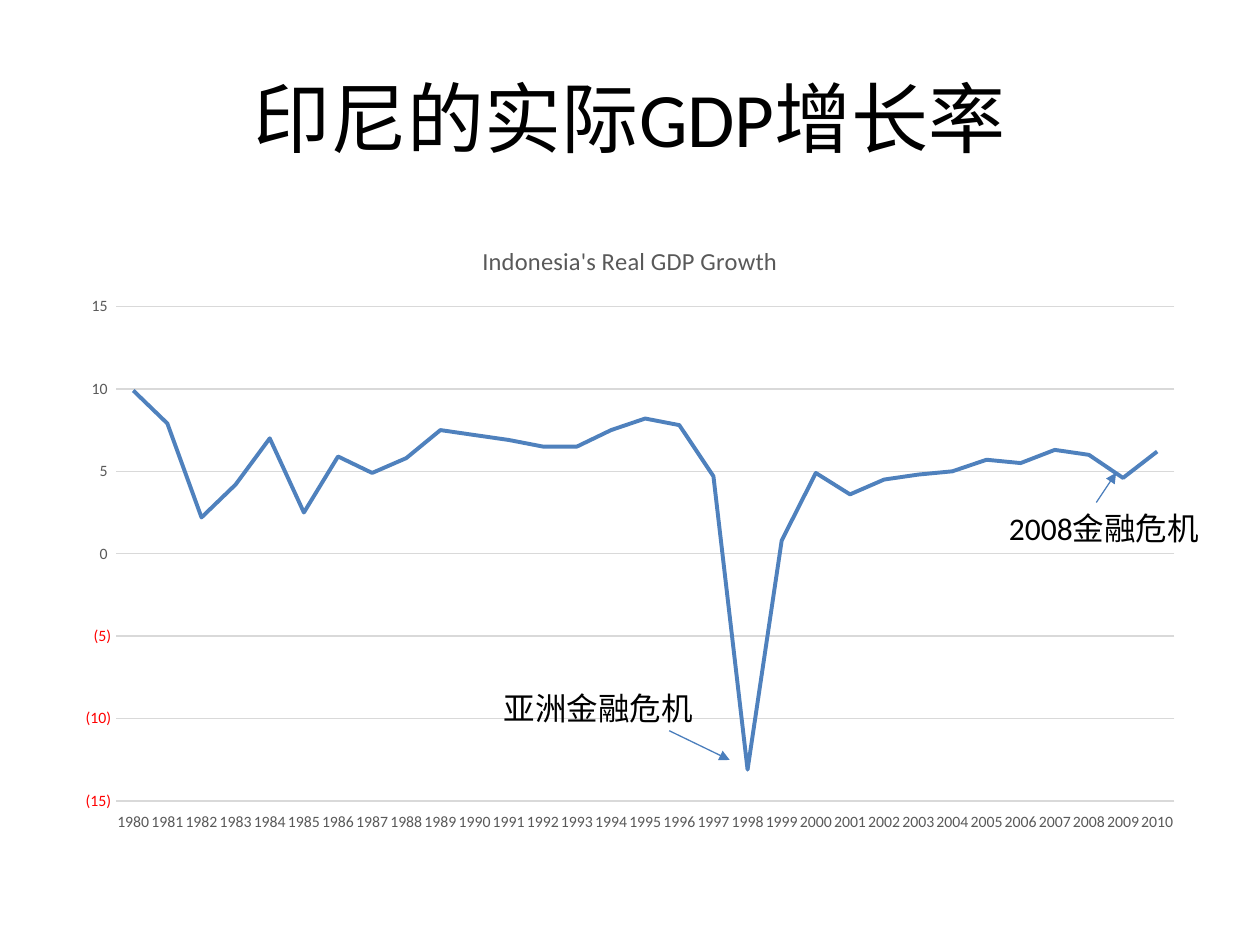
from dataclasses import dataclass

import pptx
import pptx.chart.data
import pptx.dml.color
import pptx.enum.chart
import pptx.enum.shapes
import pptx.enum.text
import pptx.oxml.ns
import pptx.oxml.xmlchemy
import pptx.util
from lxml import etree
from pptx.util import Cm


@dataclass(frozen=True)
class Theme:
    font: str = "Calibri"
    ink: str = "000000"
    muted: str = "595959"
    grid: str = "D9D9D9"
    growth: str = "4F81BD"
    arrow: str = "4B7EBC"
    title_size: float = 44
    label_size: float = 18
    chart_title_size: float = 14
    axis_size: float = 9
    chart_size: float = 10
    thin: float = 0.75
    thick: float = 2.25


theme = Theme()


def set_line(line, color, width):
    line.color.rgb = pptx.dml.color.RGBColor.from_string(color)
    line.width = pptx.util.Pt(width)


def write(text, *, frame=None, box=None, size=theme.label_size, color=theme.ink,
          align=None, anchor=pptx.enum.text.MSO_ANCHOR.TOP):
    """Write text in a given frame, or in a new text box at the given place."""
    if frame is None:
        frame = slide.shapes.add_textbox(*map(Cm, box)).text_frame
        frame.word_wrap = True
        frame.vertical_anchor = anchor
    paragraph = frame.paragraphs[0]
    paragraph.alignment = align
    run = paragraph.add_run()
    run.text = text
    run.font.name = theme.font
    run.font.size = pptx.util.Pt(size)
    run.font.bold = False
    run.font.color.rgb = pptx.dml.color.RGBColor.from_string(color)


presentation = pptx.Presentation()
presentation.slide_width, presentation.slide_height = Cm(25.4), Cm(19.05)
slide = presentation.slides.add_slide(presentation.slide_layouts[6])

# Heading
write("印尼的实际GDP增长率", box=(1.27, 0.76, 22.86, 3.18), size=theme.title_size,
      align=pptx.enum.text.PP_ALIGN.CENTER, anchor=pptx.enum.text.MSO_ANCHOR.MIDDLE)

# Growth chart, 1980 to 2010
growth_title = "Indonesia's Real GDP Growth"
growth_rates = [
    9.9, 7.9, 2.2, 4.2, 7, 2.5, 5.9, 4.9, 5.8, 7.5,
    7.2, 6.9, 6.5, 6.5, 7.5, 8.2, 7.8, 4.7, -13.1, 0.8,
    4.9, 3.6, 4.5, 4.8, 5, 5.7, 5.5, 6.3, 6, 4.6, 6.2,
]
growth_data = pptx.chart.data.CategoryChartData()
growth_data.categories = [str(1980 + i) for i in range(len(growth_rates))]
growth_data.add_series(growth_title, growth_rates)
growth_chart = slide.shapes.add_chart(
    pptx.enum.chart.XL_CHART_TYPE.LINE,
    Cm(1.27), Cm(4.45), Cm(22.86), Cm(12.57), growth_data).chart
growth_chart.font.name = theme.font
growth_chart.font.size = pptx.util.Pt(theme.chart_size)
growth_chart.has_legend = False
growth_chart.has_title = True
write(growth_title, frame=growth_chart.chart_title.text_frame,
      size=theme.chart_title_size, color=theme.muted)
growth_chart.chart_title.include_in_layout = False

growth_chart.plots[0].vary_by_categories = False
growth_line = growth_chart.plots[0].series[0]
growth_line.smooth = False
growth_line.marker.style = pptx.enum.chart.XL_MARKER_STYLE.NONE
set_line(growth_line.format.line, theme.growth, theme.thick)

# Axes
years, rates = growth_chart.category_axis, growth_chart.value_axis
for axis in (years, rates):
    axis.major_tick_mark = pptx.enum.chart.XL_TICK_MARK.NONE
    axis.minor_tick_mark = pptx.enum.chart.XL_TICK_MARK.NONE
    axis.tick_labels.font.name = theme.font
    axis.tick_labels.font.size = pptx.util.Pt(theme.axis_size)
    axis.tick_labels.font.color.rgb = pptx.dml.color.RGBColor.from_string(theme.muted)
years.tick_label_position = pptx.enum.chart.XL_TICK_LABEL_POSITION.LOW
set_line(years.format.line, theme.grid, theme.thin)
rates.minimum_scale, rates.maximum_scale, rates.major_unit = -15, 15, 5
rates.tick_labels.number_format = r"#,##0_);[Red]\(#,##0\)"
rates.tick_labels.number_format_is_linked = False
rates.format.line.fill.background()
set_line(rates.major_gridlines.format.line, theme.grid, theme.thin)

# Crisis labels and their arrows
crises = [
    ("亚洲金融危机", (9.91, 13.77, 5, 1.02), (13.49, 14.73, 14.71, 15.32)),
    ("2008金融危机", (20.09, 10.13, 4.6, 1.02), (22.1, 10.13, 22.5, 9.53)),
]
for crisis, label_box, arrow_ends in crises:
    write(crisis, box=label_box)
    arrow = slide.shapes.add_connector(
        pptx.enum.shapes.MSO_CONNECTOR.STRAIGHT, *map(Cm, arrow_ends))
    set_line(arrow.line, theme.arrow, theme.thin)
    outline = arrow.line._get_or_add_ln()
    etree.SubElement(outline, pptx.oxml.ns.qn("a:tailEnd"), type="triangle")
    etree.SubElement(outline.getparent(), pptx.oxml.ns.qn("a:effectLst"))

presentation.save("out.pptx")
